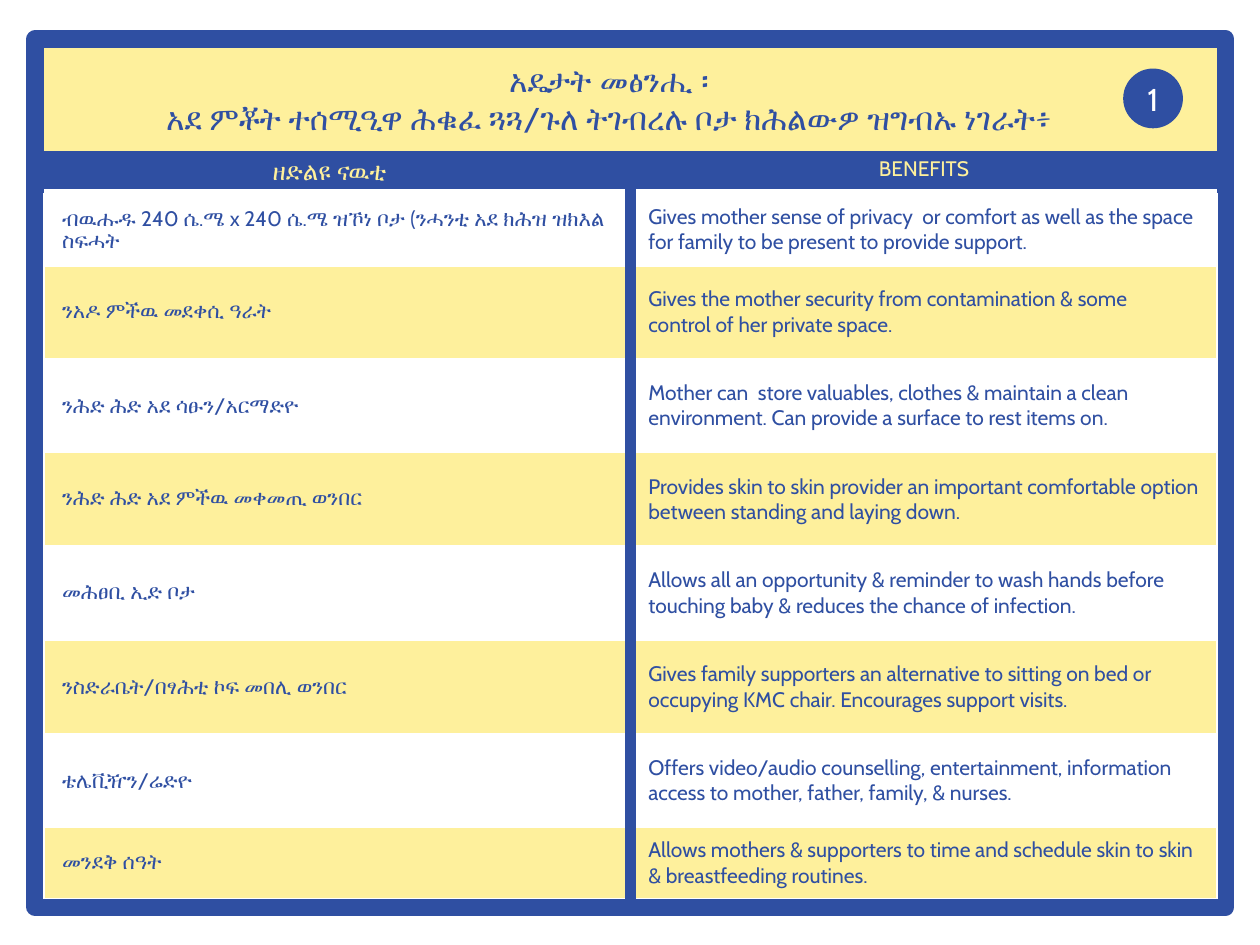
from lxml import etree
from pptx import Presentation
from pptx import util as u
from pptx.dml.color import RGBColor
from pptx.enum import shapes, text
from pptx.oxml import ns

BLUE = RGBColor(0x2F, 0x4F, 0xA2)
YELLOW = RGBColor(0xFE, 0xF0, 0x9C)
WHITE = RGBColor(0xFF, 0xFF, 0xFF)
FONT = "Cabin"

LEFT, WIDTH = 0.71, 24.0
CENTRE = LEFT + WIDTH / 2
ROW_HEIGHTS = [1.43] + [1.89] * 6 + [1.43]

TITLE = [
    ("አዴታት መፅንሒ ፡", True),
    ("አደ ምቾት ተሰሚዒዋ ሕቁፈ ጓጓ/ጉለ ትገብረሉ ቦታ ክሕልውዎ ዝግብኡ ነገራት፥", False),
]
ROWS = [
    ("ብዉሑዱ 240 ሴ.ሜ x 240 ሴ.ሜ ዝኾነ ቦታ (ንሓንቲ አደ ክሕዝ ዝክእል ስፍሓት",
     "Gives mother sense of privacy  or comfort as well as the space for family to be present to provide support."),
    ("ንአዶ ምችዉ መደቀሲ ዓራት",
     "Gives the mother security from contamination & some\ncontrol of her private space."),
    ("ንሕድ ሕድ አደ ሳፁን/አርማድዮ",
     "Mother can  store valuables, clothes & maintain a clean environment. Can provide a surface to rest items on."),
    ("ንሕድ ሕድ አደ ምችዉ መቀመጢ ወንበር",
     "Provides skin to skin provider an important comfortable option between standing and laying down."),
    ("መሕፀቢ ኢድ ቦታ",
     "Allows all an opportunity & reminder to wash hands before touching baby & reduces the chance of infection."),
    ("ንስድራቤት/በፃሕቲ ኮፍ መበሊ ወንበር",
     "Gives family supporters an alternative to sitting on bed or occupying KMC chair. Encourages support visits."),
    ("ቴሌቪዥን/ሬድዮ",
     "Offers video/audio counselling, entertainment, information access to mother, father, family, & nurses."),
    ("መንደቅ ሰዓት",
     "Allows mothers & supporters to time and schedule skin to skin & breastfeeding routines."),
]


class Sheet:
    """Hold the house style and the slide being filled."""

    def __init__(self, slide, font):
        self.slide = slide
        self.font = font

    def style(self, para, size, color, bold=False, align=text.PP_ALIGN.CENTER):
        para.alignment = align
        para.font.name = self.font
        para.font.size = u.Pt(size)
        para.font.bold = bold
        para.font.color.rgb = color

    def shape(self, kind, bounds, fill=None, line=None, weight=1):
        box = self.slide.shapes.add_shape(kind, *map(u.Cm, bounds))
        box.shadow.inherit = False
        if fill is None:
            box.fill.background()
        else:
            box.fill.solid()
            box.fill.fore_color.rgb = fill
        if line is None:
            box.line.fill.background()
        else:
            box.line.color.rgb = line
            box.line.width = u.Pt(weight)
        return box

    def badge(self, bounds, label):
        box = self.shape(shapes.MSO_SHAPE.OVAL, bounds, BLUE, BLUE)
        frame = box.text_frame
        frame.margin_left = frame.margin_right = 0
        frame.vertical_anchor = text.MSO_ANCHOR.MIDDLE
        frame.text = label
        self.style(frame.paragraphs[0], 18, WHITE)

    def label(self, bounds, lines, size, color, anchor=text.MSO_ANCHOR.TOP):
        frame = self.slide.shapes.add_textbox(*map(u.Cm, bounds)).text_frame
        frame.word_wrap = True
        frame.vertical_anchor = anchor
        frame.text = "\n".join(line for line, bold in lines)
        for para, (line, bold) in zip(frame.paragraphs, lines):
            self.style(para, size, color, bold)

    def line(self, x, top, bottom, weight):
        rule = self.slide.shapes.add_connector(
            shapes.MSO_CONNECTOR.STRAIGHT, u.Cm(x), u.Cm(top), u.Cm(x), u.Cm(bottom))
        rule.line.color.rgb = BLUE
        rule.line.width = u.Pt(weight)
        etree.SubElement(rule.element.spPr, ns.qn("a:effectLst"))

    def borders(self, cell, bottom):
        properties = cell._tc.get_or_add_tcPr()
        for side, weight in (("L", 1), ("R", 1), ("T", 1), ("B", bottom)):
            edge = etree.SubElement(properties, ns.qn(f"a:ln{side}"), w=str(u.Pt(weight)))
            fill = etree.SubElement(edge, ns.qn("a:solidFill"))
            etree.SubElement(fill, ns.qn("a:srgbClr"), val=str(WHITE))

    def table(self, left, top, width, heights, rows):
        grid = self.slide.shapes.add_table(
            len(rows), 2, u.Cm(left), u.Cm(top), u.Cm(width), u.Cm(sum(heights))).table
        grid.first_row = grid.horz_banding = False
        for index, (height, row) in enumerate(zip(heights, rows)):
            grid.rows[index].height = u.Cm(height)
            for cell, words in zip(grid.rows[index].cells, row):
                self.borders(cell, 1 if index else 3)
                cell.fill.solid()
                cell.fill.fore_color.rgb = YELLOW if index % 2 else WHITE
                cell.vertical_anchor = text.MSO_ANCHOR.MIDDLE
                cell.margin_left, cell.margin_right = u.Cm(0.36), u.Cm(0.18)
                cell.margin_top = cell.margin_bottom = u.Cm(0.1)
                cell.text = words
                for para in cell.text_frame.paragraphs:
                    self.style(para, 12, BLUE, align=text.PP_ALIGN.LEFT)


def main():
    deck = Presentation()
    deck.slide_width, deck.slide_height = u.Cm(25.4), u.Cm(19.05)
    page = Sheet(deck.slides.add_slide(deck.slide_layouts[6]), FONT)
    rectangle = shapes.MSO_SHAPE.RECTANGLE

    page.shape(rectangle, (LEFT, 0.79, WIDTH, 3), YELLOW)
    page.shape(rectangle, (LEFT, 0.79, WIDTH, 17.5), line=BLUE, weight=10)
    page.shape(rectangle, (LEFT, 3.05, WIDTH, 0.76), BLUE)
    page.label((LEFT, 3.02, 11.86, 0.86), [("ዘድልዩ ናዉቲ", False)], 14, YELLOW)
    page.label((12.7, 3.02, 11.86, 0.76), [("BENEFITS", False)], 12, YELLOW)
    page.table(0.89, 3.91, 23.64, ROW_HEIGHTS, ROWS)
    page.line(CENTRE, 3.71, 18.16, 6)
    page.label((LEFT, 1.09, 23.14, 1.8), TITLE, 18, BLUE, text.MSO_ANCHOR.MIDDLE)
    page.badge((22.66, 1.4, 1.17, 1.17), "1")
    deck.save("out.pptx")


if __name__ == "__main__":
    main()
